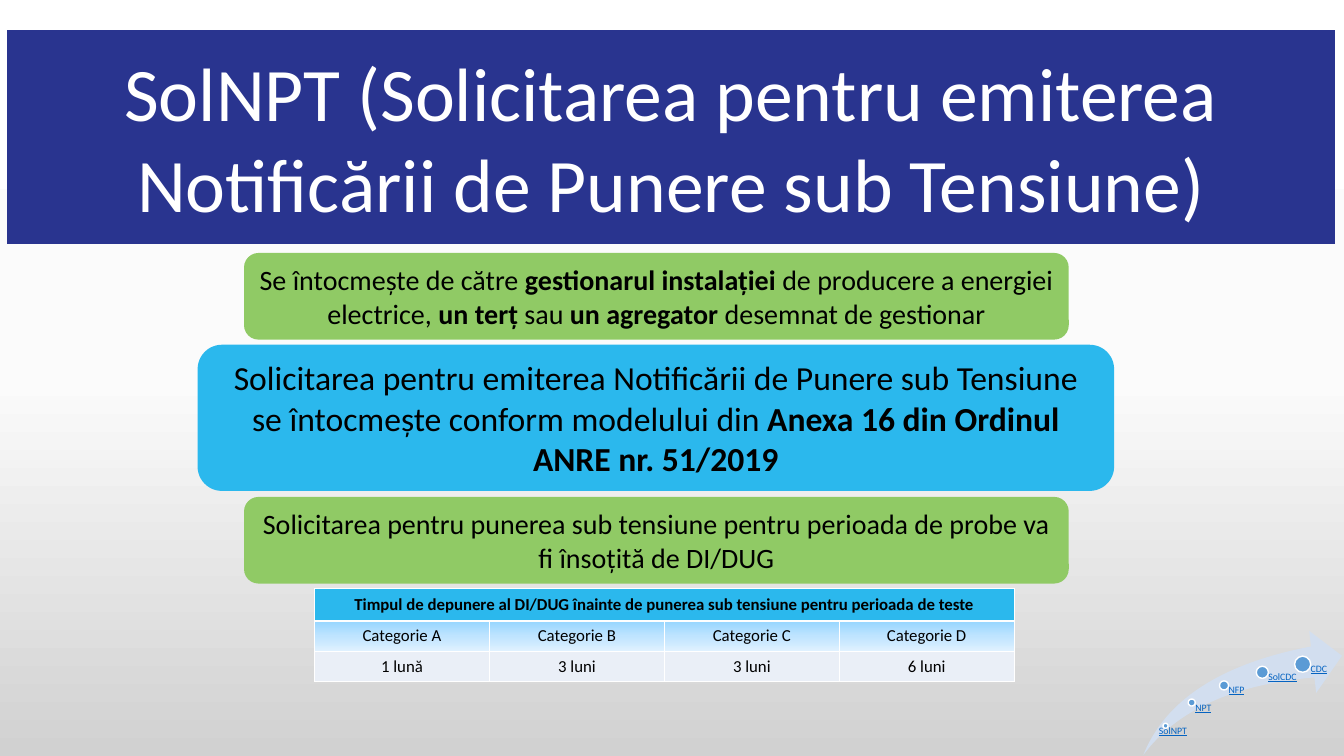
from dataclasses import dataclass

from lxml import etree
from pptx import Presentation
from pptx.dml.color import RGBColor
from pptx.enum import shapes, text
from pptx.oxml.ns import qn
from pptx.util import Inches, Pt


@dataclass(frozen=True)
class Theme:
    font: str = "Calibri"
    navy: str = "29348F"
    green: str = "90CA65"
    cyan: str = "2BB8ED"
    swoosh: str = "D2DEEF"
    dot: str = "5B9BD5"
    link: str = "0563C1"
    value_row: str = "EAEFF7"
    black: str = "000000"
    white: str = "FFFFFF"
    backdrop: tuple = ("FFFFFF", "FBFBFB", "D1D1D1")
    category_row: tuple = ("96D6FF", "BFE4FF", "DFF1FF")
    title_size: int = 54
    key_size: int = 24
    note_size: int = 20
    table_size: int = 12
    step_size: int = 7


THEME = Theme()
PRESET = shapes.MSO_SHAPE

RULE_TITLE = "SolNPT (Solicitarea pentru emiterea Notificării de Punere sub Tensiune)"
AUTHORS = [[("Se întocmește de către ", False), ("gestionarul instalației ", True),
            ("de producere a energiei electrice, ", False), ("un terț ", True),
            ("sau ", False), ("un agregator ", True), ("desemnat de gestionar", False)]]
MODEL = [[("Solicitarea pentru emiterea Notificării de Punere sub Tensiune", False)],
         [("se întocmește conform modelului din ", False),
          ("Anexa 16 din Ordinul ANRE nr. 51/2019", True)]]
ATTACHMENT = [[("Solicitarea pentru punerea sub tensiune pentru perioada de probe va "
                "fi însoțită de DI/DUG", False)]]
DEADLINE_HEADING = ("Timpul de depunere al DI/DUG înainte de punerea sub tensiune "
                    "pentru perioada de teste")
DEADLINES = [("Categorie A", "1 lună"), ("Categorie B", "3 luni"),
             ("Categorie C", "3 luni"), ("Categorie D", "6 luni")]
# name, dot centre x and y, dot diameter, label left, label width
STEPS = [("SolNPT", 11.56, 7.2, 0.05, 11.47, 0.43),
         ("NPT", 11.82, 6.97, 0.07, 11.82, 0.33),
         ("NFP", 12.14, 6.8, 0.09, 12.14, 0.38),
         ("SolCDC", 12.52, 6.67, 0.12, 12.52, 0.39),
         ("CDC", 12.92, 6.59, 0.16, 12.92, 0.39)]
LABEL_BOTTOM = 7.49


def rgb(colour):
    return RGBColor.from_string(colour)


def fill_solid(fill, colour):
    fill.solid()
    fill.fore_color.rgb = rgb(colour)


def fill_downward(fill, owner, colours):
    """Fill with evenly spaced gradient stops, top to bottom; owner is the XML holding the fill."""
    fill.gradient()
    fill.gradient_angle = 270
    stops = owner.find(".//" + qn("a:gsLst"))
    for stop in list(stops):
        stops.remove(stop)
    for index, colour in enumerate(colours):
        position = 100000 * index // (len(colours) - 1)
        stop = etree.SubElement(stops, qn("a:gs"), pos=str(position))
        etree.SubElement(stop, qn("a:srgbClr"), val=colour)


def add_run(paragraph, wording, size, colour=THEME.black, bold=False, underline=None):
    run = paragraph.add_run()
    run.text = wording
    run.font.name = THEME.font
    run.font.size = Pt(size)
    run.font.color.rgb = rgb(colour)
    run.font.bold = bold
    run.font.underline = underline


def write_centred(frame, paragraphs, size, colour=THEME.black):
    frame.word_wrap = True
    frame.vertical_anchor = text.MSO_ANCHOR.MIDDLE
    for index, runs in enumerate(paragraphs):
        paragraph = frame.add_paragraph() if index else frame.paragraphs[0]
        paragraph.alignment = text.PP_ALIGN.CENTER
        for wording, bold in runs:
            add_run(paragraph, wording, size, colour, bold)


def add_plain_shape(parent, preset, box, colour):
    shape = parent.add_shape(preset, *map(Inches, box))
    shape.shadow.inherit = False
    fill_solid(shape.fill, colour)
    shape.line.fill.background()
    return shape


def add_title(slide):
    title = slide.shapes.title
    title.left, title.top, title.width, title.height = map(Inches, (0.07, 0.3, 13.17, 2.12))
    outline = etree.SubElement(title.element.spPr, qn("a:prstGeom"), prst="roundRect")
    etree.SubElement(outline, qn("a:avLst"))
    fill_solid(title.fill, THEME.navy)
    write_centred(title.text_frame, [[(RULE_TITLE, False)]], THEME.title_size, THEME.white)
    title.text_frame.auto_size = text.MSO_AUTO_SIZE.NONE


def add_panel(slide, box, colour, paragraphs, size):
    panel = add_plain_shape(slide.shapes, PRESET.ROUNDED_RECTANGLE, box, colour)
    write_centred(panel.text_frame, paragraphs, size)


def add_step(group, name, centre_x, centre_y, diameter, label_left, label_width):
    radius = diameter / 2
    dot = add_plain_shape(group, PRESET.OVAL,
                          (centre_x - radius, centre_y - radius, diameter, diameter), THEME.dot)
    dot.line.color.rgb = rgb(THEME.white)
    dot.line.width = Pt(1)

    label = group.add_textbox(*map(Inches, (label_left, centre_y, label_width,
                                            LABEL_BOTTOM - centre_y)))
    frame = label.text_frame
    frame.word_wrap = True
    frame.margin_left = Inches(radius)
    frame.margin_top = frame.margin_right = frame.margin_bottom = 0
    frame.paragraphs[0].line_spacing = 0.9
    add_run(frame.paragraphs[0], name, THEME.step_size, THEME.link, underline=True)


def add_roadmap(slide):
    group = slide.shapes.add_group_shape().shapes
    arrow = add_plain_shape(group, PRESET.SWOOSH_ARROW, (11.34, 6.26, 1.97, 1.23), THEME.swoosh)
    arrow.adjustments[0] = arrow.adjustments[1] = 0.25
    for step in STEPS:
        add_step(group, *step)


def write_cell(cell, wording, bold=False):
    cell.vertical_anchor = text.MSO_ANCHOR.MIDDLE
    paragraph = cell.text_frame.paragraphs[0]
    paragraph.alignment = text.PP_ALIGN.CENTER
    add_run(paragraph, wording, THEME.table_size, bold=bold)


def add_deadlines(slide):
    table = slide.shapes.add_table(3, len(DEADLINES),
                                   *map(Inches, (3.12, 5.84, 6.94, 0.92))).table
    for row, height in zip(table.rows, (0.32, 0.3, 0.3)):
        row.height = Inches(height)
    heading = table.cell(0, 0)
    heading.merge(table.cell(0, len(DEADLINES) - 1))
    write_cell(heading, DEADLINE_HEADING, bold=True)
    for column, (category, deadline) in enumerate(DEADLINES):
        fill_solid(table.cell(0, column).fill, THEME.cyan)
        category_cell, deadline_cell = table.cell(1, column), table.cell(2, column)
        write_cell(category_cell, category)
        fill_downward(category_cell.fill, category_cell._tc, THEME.category_row)
        write_cell(deadline_cell, deadline)
        fill_solid(deadline_cell.fill, THEME.value_row)


def main():
    deck = Presentation()
    deck.slide_width, deck.slide_height = Inches(13.33), Inches(7.5)
    slide = deck.slides.add_slide(deck.slide_layouts.get_by_name("Title Only"))
    fill_downward(slide.background.fill, slide.element, THEME.backdrop)

    add_title(slide)
    add_panel(slide, (2.42, 2.51, 8.18, 0.86), THEME.green, AUTHORS, THEME.note_size)
    add_panel(slide, (1.96, 3.42, 9.09, 1.45), THEME.cyan, MODEL, THEME.key_size)
    add_roadmap(slide)
    add_panel(slide, (2.42, 4.93, 8.18, 0.86), THEME.green, ATTACHMENT, THEME.note_size)
    add_deadlines(slide)
    deck.save("out.pptx")


if __name__ == "__main__":
    main()
